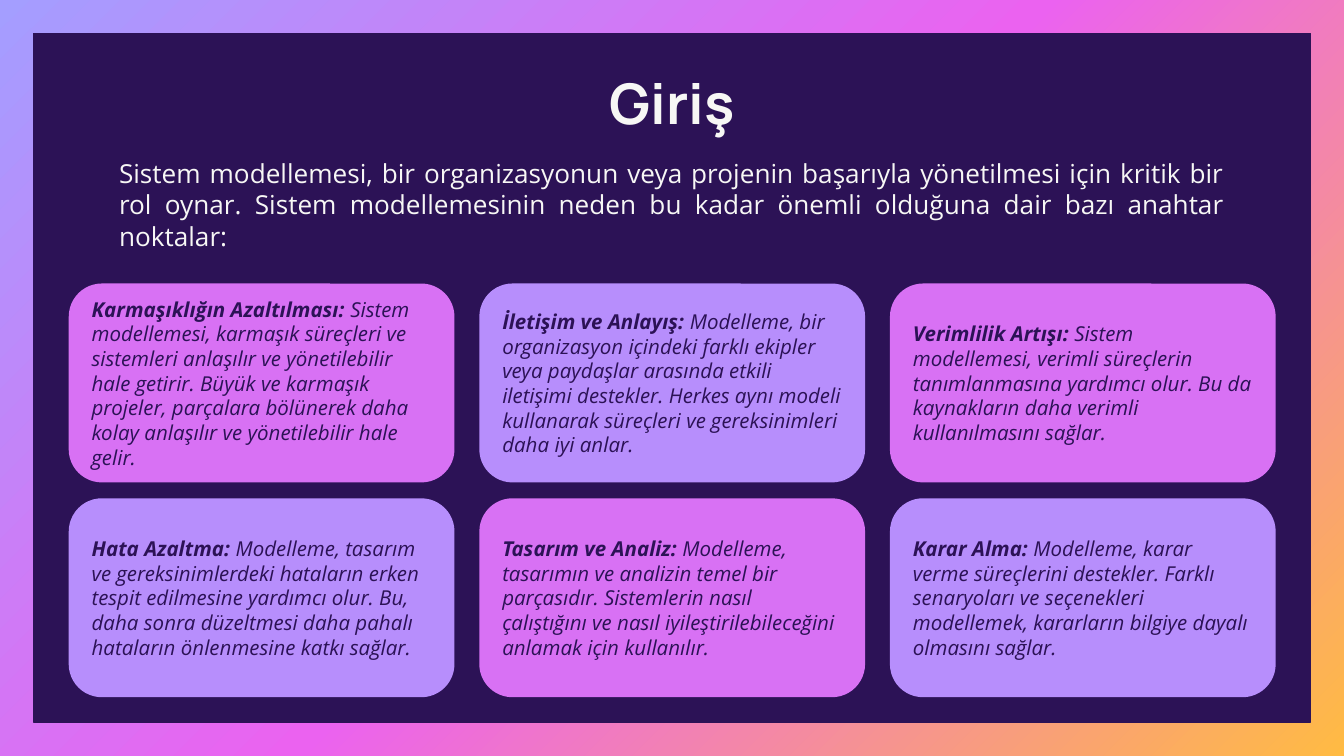
from copy import deepcopy

from pptx import Presentation
from pptx.dml.color import RGBColor
from pptx.enum.shapes import MSO_SHAPE as SHAPE
from pptx.enum.text import MSO_ANCHOR as ANCHOR, PP_ALIGN as ALIGN
from pptx.oxml.ns import qn
from pptx.util import Cm, Pt

COLORS = {
    "sky": "A49EFF", "magenta": "EB62F0", "amber": "FFBB43",
    "night": "2C1256", "light": "F7F7F5", "pink": "D871F4", "violet": "B78EFC",
}
INTRO = (
    "Sistem modellemesi, bir organizasyonun veya projenin başarıyla yönetilmesi için "
    "kritik bir rol oynar. Sistem modellemesinin neden bu kadar önemli olduğuna dair "
    "bazı anahtar noktalar:"
)
CARDS = [
    ("Karmaşıklığın Azaltılması:",
     "Sistem modellemesi, karmaşık süreçleri ve sistemleri anlaşılır ve yönetilebilir hale "
     "getirir. Büyük ve karmaşık projeler, parçalara bölünerek daha kolay anlaşılır ve "
     "yönetilebilir hale gelir."),
    ("İletişim ve Anlayış:",
     "Modelleme, bir organizasyon içindeki farklı ekipler veya paydaşlar arasında etkili "
     "iletişimi destekler. Herkes aynı modeli kullanarak süreçleri ve gereksinimleri daha "
     "iyi anlar."),
    ("Verimlilik Artışı:",
     "Sistem modellemesi, verimli süreçlerin tanımlanmasına yardımcı olur. Bu da "
     "kaynakların daha verimli kullanılmasını sağlar."),
    ("Hata Azaltma:",
     "Modelleme, tasarım ve gereksinimlerdeki hataların erken tespit edilmesine yardımcı "
     "olur. Bu, daha sonra düzeltmesi daha pahalı hataların önlenmesine katkı sağlar."),
    ("Tasarım ve Analiz:",
     "Modelleme, tasarımın ve analizin temel bir parçasıdır. Sistemlerin nasıl çalıştığını "
     "ve nasıl iyileştirilebileceğini anlamak için kullanılır."),
    ("Karar Alma:",
     "Modelleme, karar verme süreçlerini destekler. Farklı senaryoları ve seçenekleri "
     "modellemek, kararların bilgiye dayalı olmasını sağlar."),
]
COLUMNS = 3
CARD_W, CARD_H = 7.29, 3.76
CARD_X, CARD_Y = 1.3, 5.36
STEP_X, STEP_Y = 7.76, 4.06


def rgb(name):
    """Return the named colour."""
    return RGBColor.from_string(COLORS[name])


def style(font, name, size, color):
    """Set the typeface, size and colour of a font."""
    font.name, font.size = name, Pt(size)
    font.color.rgb = rgb(color)


def paint_background(s):
    """Fill the background with a diagonal three-colour gradient."""
    fill = s.background.fill
    fill.gradient()
    fill.gradient_angle = 315
    stops = next(s.element.iter(qn("a:gsLst")))
    stops.insert(1, deepcopy(stops[0]))
    for i, (stop, color) in enumerate(zip(fill.gradient_stops, ("sky", "magenta", "amber"))):
        stop.position = i / 2
        stop.color.rgb = rgb(color)


def add_box(s, kind, x, y, w, h, color):
    """Add a flat filled shape without an outline."""
    sp = s.shapes.add_shape(kind, Cm(x), Cm(y), Cm(w), Cm(h))
    sp.shadow.inherit = False
    sp.fill.solid()
    sp.fill.fore_color.rgb = rgb(color)
    sp.line.fill.background()
    return sp


def add_text(s, text, x, y, w, h, font, size, align, anchor):
    """Add a wrapped text box and return its paragraph."""
    tf = s.shapes.add_textbox(Cm(x), Cm(y), Cm(w), Cm(h)).text_frame
    tf.word_wrap = True
    tf.vertical_anchor = anchor
    tf.margin_left = tf.margin_top = tf.margin_right = tf.margin_bottom = Cm(0.25)
    p = tf.paragraphs[0]
    p.text, p.alignment = text, align
    style(p.font, font, size, "light")
    return p


def add_card(s, x, y, color, heading, body):
    """Add a rounded card with a bold heading that runs into its text."""
    sp = add_box(s, SHAPE.ROUNDED_RECTANGLE, x, y, CARD_W, CARD_H, color)
    tf = sp.text_frame
    tf.word_wrap = True
    tf.vertical_anchor = ANCHOR.MIDDLE
    p = tf.paragraphs[0]
    p.alignment = ALIGN.LEFT
    style(p.font, "Open Sans", 11, "night")
    p.font.italic = True
    for text, bold in ((heading, True), (" " + body, False)):
        r = p.add_run()
        r.text, r.font.bold = text, bold


def main():
    """Build the slide and save it."""
    prs = Presentation()
    prs.slide_width, prs.slide_height = Cm(25.4), Cm(14.29)
    s = prs.slides.add_slide(prs.slide_layouts[6])
    paint_background(s)
    panel = add_box(s, SHAPE.RECTANGLE, 0.63, 0.63, 24.14, 13.02, "night")
    panel.line.color.rgb = rgb("night")
    panel.line.width = Pt(0.75)
    title = add_text(s, "Giriş", 2, 1.04, 21.4, 1.57, "Manrope", 30, ALIGN.CENTER, ANCHOR.TOP)
    title.font.bold = True
    add_text(s, INTRO, 2, 2.77, 21.4, 2.18, "Open Sans", 14, ALIGN.JUSTIFY, ANCHOR.MIDDLE)
    for i, (heading, body) in enumerate(CARDS):
        row, col = divmod(i, COLUMNS)
        color = ("pink", "violet")[i % 2]
        add_card(s, CARD_X + col * STEP_X, CARD_Y + row * STEP_Y, color, heading, body)
    prs.save("out.pptx")


if __name__ == "__main__":
    main()
